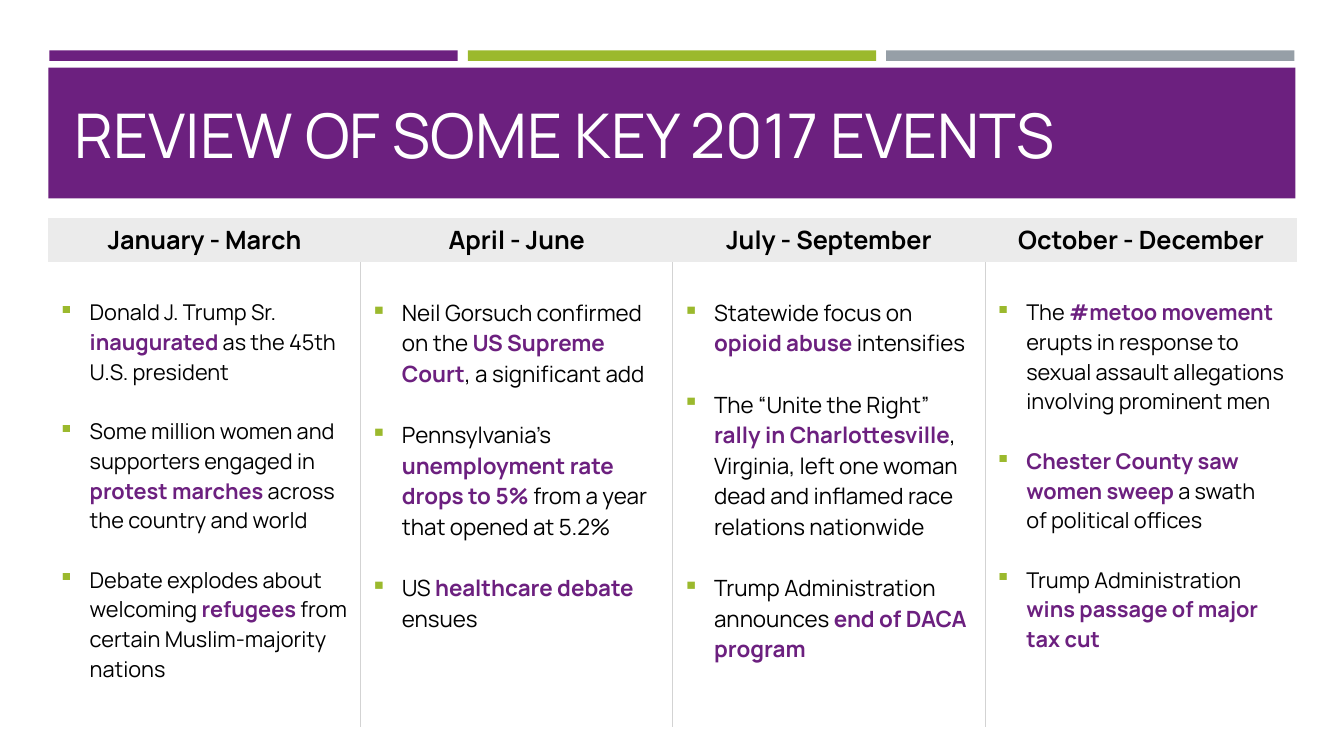
from dataclasses import dataclass

import lxml.etree
import pptx
import pptx.dml.color
import pptx.enum.shapes
import pptx.enum.text
import pptx.oxml.ns
import pptx.util

WIDE, TALL = pptx.util.Inches(13.33), pptx.util.Inches(7.5)
FACE = "Manrope"
PURPLE, GREEN, GREY = "6C207F", "9BB92D", "969FA7"
PALE, RULE, BLACK, WHITE = "EBEBEB", "D3D3D3", "000000", "FFFFFF"
PLAIN = "{2D5ABB26-0587-4C30-8999-92F81FD0307C}"
LEFT, PITCH, SPAN = 3.6, 31.13, 23.23
LINE = 1.366
INDENT = pptx.util.Inches(0.31)


@dataclass
class Bar:
    left: float
    top: float
    width: float
    height: float
    fill: str


@dataclass
class Quarter:
    name: str
    size: float
    events: list[str]


BARS = [Bar(3.68 + i * PITCH, 6.67, 30.38, 1.4, fill)
        for i, fill in enumerate([PURPLE, GREEN, GREY])]
BARS.append(Bar(LEFT, 8.93, 92.78, 17.33, PURPLE))

QUARTERS = [
    Quarter("January - March", 15.5, [
        "Donald J. Trump Sr. *inaugurated* as the 45th U.S. president",
        "Some million women and supporters engaged in *protest marches* across the country and world",
        "Debate explodes about welcoming *refugees* from certain Muslim-majority nations",
    ]),
    Quarter("April - June", 16, [
        "Neil Gorsuch confirmed on the *US Supreme Court*, a significant add",
        "Pennsylvania’s *unemployment rate drops to 5%* from a year that opened at 5.2%",
        "US *healthcare debate* ensues",
    ]),
    Quarter("July - September", 16, [
        "Statewide focus on *opioid abuse* intensifies",
        "The “Unite the Right” *rally in Charlottesville*, Virginia, left one woman dead"
        " and inflamed race relations nationwide",
        "Trump Administration announces *end of DACA program*",
    ]),
    Quarter("October - December", 15.5, [
        "The *#metoo movement* erupts in response to sexual assault allegations involving prominent men",
        "*Chester County saw women sweep* a swath\nof political offices",
        "Trump Administration *wins passage of major tax cut*",
    ]),
]


def across(share: float) -> int:
    return round(WIDE * share / 100)


def down(share: float) -> int:
    return round(TALL * share / 100)


def tint(code: str) -> pptx.dml.color.RGBColor:
    return pptx.dml.color.RGBColor.from_string(code)


def paint(item, code: str) -> None:
    item.fill.solid()
    item.fill.fore_color.rgb = tint(code)


def style(font, size: float, code: str | None = None, bold: bool | None = None) -> None:
    font.name = FACE
    font.size = pptx.util.Pt(size)
    font.bold = bold
    if code:
        font.color.rgb = tint(code)


def child(node, tag: str, **attrs: str):
    return lxml.etree.SubElement(node, pptx.oxml.ns.qn(tag), attrs)


def draw_bar(slide, bar: Bar) -> None:
    shape = slide.shapes.add_shape(
        pptx.enum.shapes.MSO_SHAPE.RECTANGLE,
        across(bar.left), down(bar.top), across(bar.width), down(bar.height))
    shape.shadow.inherit = False
    paint(shape, bar.fill)
    shape.line.fill.background()


def draw_title(slide, text: str) -> None:
    title = slide.shapes.title
    title.left, title.top = across(4.8), down(10.27)
    title.width, title.height = across(89.63), down(14.8)
    frame = title.text_frame
    frame.text = text
    frame.auto_size = pptx.enum.text.MSO_AUTO_SIZE.NONE
    frame.vertical_anchor = pptx.enum.text.MSO_ANCHOR.MIDDLE
    para = frame.paragraphs[0]
    para.alignment = pptx.enum.text.PP_ALIGN.LEFT
    style(para.font, 44, WHITE)
    slide.shapes._spTree.append(title._element)


def add_rule(cell, tag: str) -> None:
    props = cell._tc.get_or_add_tcPr()
    line = child(props, tag, w=str(pptx.util.Pt(0.75)))
    child(child(line, "a:solidFill"), "a:srgbClr", val=RULE)
    props.insert(0, line)


def add_mark(para) -> None:
    props = para._p.get_or_add_pPr()
    props.set("marL", str(INDENT))
    props.set("indent", str(-INDENT))
    child(child(props, "a:buClr"), "a:srgbClr", val=GREEN)
    child(props, "a:buChar", char="▪")


def write_event(para, text: str, size: float) -> None:
    add_mark(para)
    style(para.font, size)
    for i, part in enumerate(text.split("*")):
        strong = i % 2 == 1
        for j, piece in enumerate(part.split("\n")):
            if j:
                para.add_line_break()
            if piece:
                run = para.add_run()
                run.text = piece
                run.font.bold = strong
                run.font.color.rgb = tint(PURPLE if strong else BLACK)


def fill_head(cell, name: str) -> None:
    paint(cell, PALE)
    cell.vertical_anchor = pptx.enum.text.MSO_ANCHOR.MIDDLE
    cell.text = name
    para = cell.text_frame.paragraphs[0]
    para.alignment = pptx.enum.text.PP_ALIGN.CENTER
    style(para.font, 18, BLACK, True)


def fill_body(cell, quarter: Quarter) -> None:
    paint(cell, WHITE)
    cell.margin_top = pptx.util.Inches(0.35)
    frame = cell.text_frame
    for i, text in enumerate(quarter.events):
        para = frame.add_paragraph() if i else frame.paragraphs[0]
        if i:
            para.space_before = pptx.util.Pt(round(quarter.size * LINE, 1))
        write_event(para, text, quarter.size)


def draw_table(slide) -> None:
    count = len(QUARTERS)
    heights = [5.87, 61.47]
    table = slide.shapes.add_table(
        2, count, across(LEFT), down(28.8),
        across(SPAN * count), down(sum(heights))).table
    table.horz_banding = False
    table._tbl.tblPr.find(pptx.oxml.ns.qn("a:tableStyleId")).text = PLAIN
    for row, height in zip(table.rows, heights):
        row.height = down(height)
    for i, quarter in enumerate(QUARTERS):
        table.columns[i].width = across(SPAN)
        fill_head(table.cell(0, i), quarter.name)
        body = table.cell(1, i)
        fill_body(body, quarter)
        if i < count - 1:
            add_rule(body, "a:lnR")
        if i:
            add_rule(body, "a:lnL")


def main() -> None:
    deck = pptx.Presentation()
    deck.slide_width, deck.slide_height = WIDE, TALL
    slide = deck.slides.add_slide(deck.slide_layouts.get_by_name("Title Only"))
    for bar in BARS:
        draw_bar(slide, bar)
    draw_title(slide, "REVIEW OF SOME KEY 2017 EVENTS")
    draw_table(slide)
    deck.save("out.pptx")


if __name__ == "__main__":
    main()
